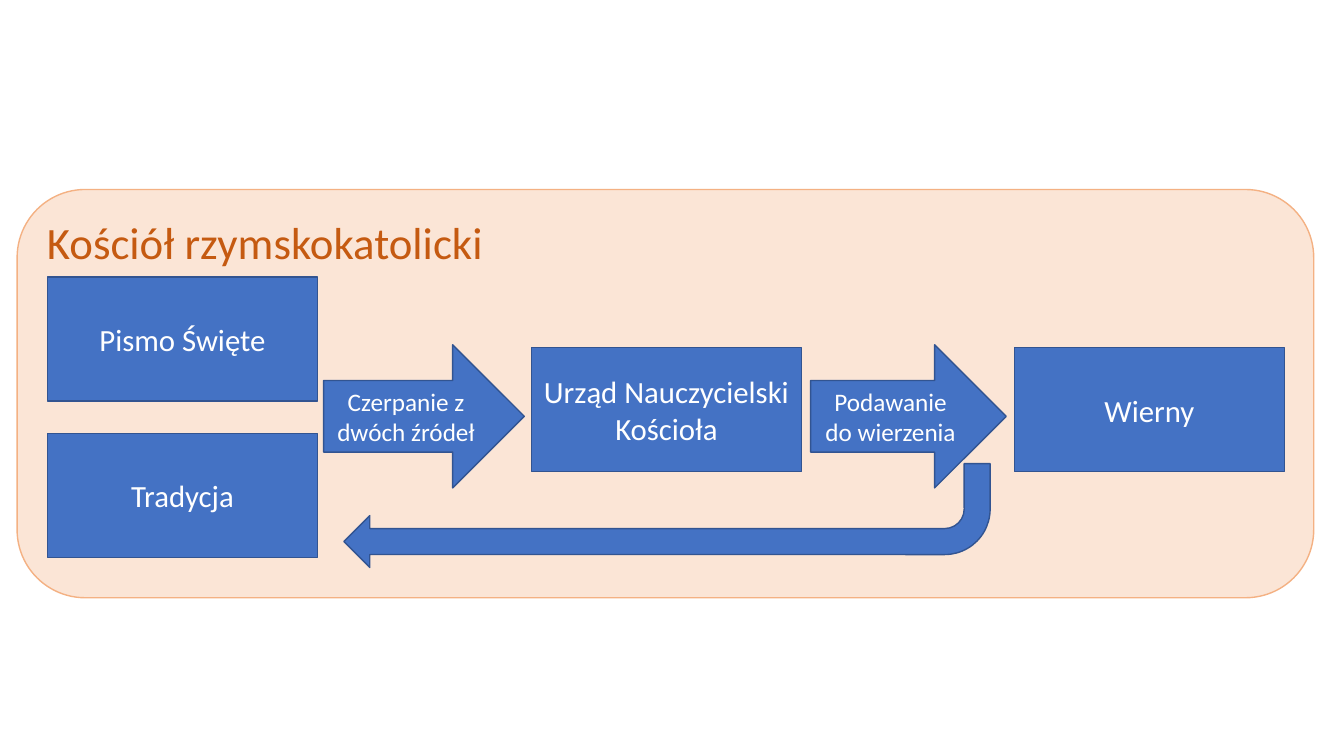
from dataclasses import dataclass

from pptx import Presentation
from pptx.dml.color import RGBColor
from pptx.enum.shapes import MSO_SHAPE as Kind
from pptx.enum.text import MSO_ANCHOR as Anchor, PP_ALIGN as Align
from pptx.slide import Slide
from pptx.util import Emu, Pt

EMU_PER_PX = 9144
FONT = "Calibri"
COLORS = {
    "panel": "FBE5D6",
    "panel_line": "F4B183",
    "title": "C55A11",
    "block": "4472C4",
    "block_line": "325491",
    "block_text": "FFFFFF",
}

BLOCK_WIDTH, BLOCK_HEIGHT = 268, 123
SOURCE_LEFT = 47
FLOW_TOP = 345
ARROW_TOP, ARROW_HEIGHT = 342, 142


@dataclass(frozen=True)
class Block:
    kind: Kind
    left: int
    top: int
    width: int
    height: int
    text: str = ""
    size: int = 22
    fill: str = "block"
    line: str = "block_line"
    color: str = "block_text"
    align: Align = Align.CENTER
    anchor: Anchor = Anchor.MIDDLE
    rotation: int = 0


def concept(left: int, top: int, text: str) -> Block:
    return Block(Kind.RECTANGLE, left, top, BLOCK_WIDTH, BLOCK_HEIGHT, text)


def step(left: int, width: int, text: str) -> Block:
    return Block(Kind.RIGHT_ARROW, left, ARROW_TOP, width, ARROW_HEIGHT, text, size=18)


BLOCKS = [
    Block(
        Kind.ROUNDED_RECTANGLE, 17, 188, 1286, 405, "Kościół rzymskokatolicki",
        size=32, fill="panel", line="panel_line", color="title",
        align=Align.LEFT, anchor=Anchor.TOP,
    ),
    concept(SOURCE_LEFT, 275, "Pismo Święte"),
    concept(527, FLOW_TOP, "Urząd Nauczycielski Kościoła"),
    concept(SOURCE_LEFT, 430, "Tradycja"),
    concept(1006, FLOW_TOP, "Wierny"),
    step(321, 199, "Czerpanie z dwóch źródeł"),
    step(804, 194, "Podawanie do wierzenia"),
    Block(Kind.BENT_ARROW, 341, 460, 641, 103, rotation=180),
]


def px(length: int) -> Emu:
    return Emu(length * EMU_PER_PX)


def rgb(name: str) -> RGBColor:
    return RGBColor.from_string(COLORS[name])


def draw_block(page: Slide, block: Block) -> None:
    box = page.shapes.add_shape(
        block.kind, px(block.left), px(block.top), px(block.width), px(block.height)
    )
    box.rotation = block.rotation
    box.shadow.inherit = False
    box.fill.solid()
    box.fill.fore_color.rgb = rgb(block.fill)
    box.line.color.rgb = rgb(block.line)
    box.line.width = Pt(1)
    if not block.text:
        return
    frame = box.text_frame
    frame.word_wrap = True
    frame.vertical_anchor = block.anchor
    para = frame.paragraphs[0]
    para.alignment = block.align
    span = para.add_run()
    span.text = block.text
    span.font.name = FONT
    span.font.size = Pt(block.size)
    span.font.color.rgb = rgb(block.color)


def main() -> None:
    deck = Presentation()
    deck.slide_width, deck.slide_height = px(1333), px(750)
    page = deck.slides.add_slide(deck.slide_layouts[6])
    for block in BLOCKS:
        draw_block(page, block)
    deck.save("out.pptx")


if __name__ == "__main__":
    main()
